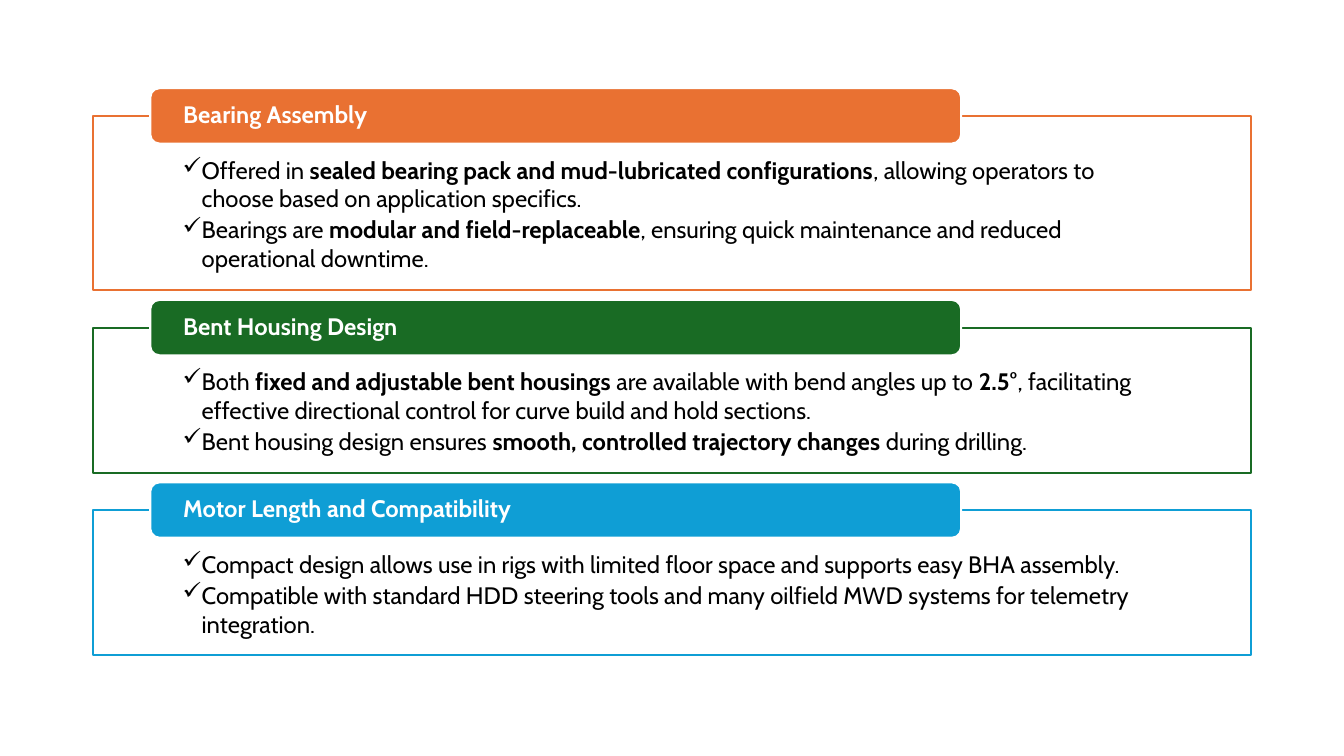
import pptx
import pptx.dml.color
import pptx.enum.shapes
import pptx.enum.text
import pptx.util
from lxml import etree
from pptx.oxml.ns import qn

Inches, Pt = pptx.util.Inches, pptx.util.Pt
SHAPES = pptx.enum.shapes.MSO_SHAPE
ANCHOR = pptx.enum.text.MSO_ANCHOR
ALIGN = pptx.enum.text.PP_ALIGN

SLIDE_WIDTH, SLIDE_HEIGHT = 13.33, 7.5
PANEL_LEFT, PANEL_TOP, PANEL_WIDTH = 0.92, 1.15, 11.49
PANEL_GAP = 0.37
TAB_INDENT, TAB_SHARE, TAB_HEIGHT = 0.57, 0.7, 0.55
BULLET_INDENT = 0.19

# Heading, colour, panel height, bullets; asterisks enclose bold words
SECTIONS = [
    ("Bearing Assembly", "E97132", 1.73, [
        "Offered in *sealed bearing pack and mud-lubricated configurations*, "
        "allowing operators to choose based on application specifics.",
        "Bearings are *modular and field-replaceable*, ensuring quick "
        "maintenance and reduced operational downtime.",
    ]),
    ("Bent Housing Design", "196B24", 1.44, [
        "Both *fixed and adjustable bent housings* are available with bend "
        "angles up to *2.5°*, facilitating effective directional control for "
        "curve build and hold sections.",
        "Bent housing design ensures *smooth, controlled trajectory changes* "
        "during drilling.",
    ]),
    ("Motor Length and Compatibility", "0F9ED5", 1.44, [
        "Compact design allows use in rigs with limited floor space and "
        "supports easy BHA assembly.",
        "Compatible with standard HDD steering tools and many oilfield MWD "
        "systems for telemetry integration.",
    ]),
]


def color(hex_string):
    return pptx.dml.color.RGBColor.from_string(hex_string)


def add_box(slide, preset, box, fill, line, insets, anchor):
    shape = slide.shapes.add_shape(preset, *map(Inches, box))
    shape.shadow.inherit = False
    shape.fill.solid()
    shape.fill.fore_color.rgb = color(fill)
    shape.line.color.rgb = color(line)
    shape.line.width = Pt(1.5)
    frame = shape.text_frame
    frame.word_wrap = True
    frame.vertical_anchor = anchor
    (frame.margin_left, frame.margin_top,
     frame.margin_right, frame.margin_bottom) = map(Inches, insets)
    return shape


def style_paragraph(paragraph, hex_string):
    paragraph.alignment = ALIGN.LEFT
    paragraph.font.name = "Cabin"
    paragraph.font.size = Pt(17)
    paragraph.font.color.rgb = color(hex_string)


def add_bullet(paragraph, text):
    style_paragraph(paragraph, "000000")
    paragraph.space_after = Pt(2)
    # Hanging check mark
    properties = paragraph._p.get_or_add_pPr()
    properties.set("marL", str(Inches(BULLET_INDENT)))
    properties.set("indent", str(-Inches(BULLET_INDENT)))
    bullet = etree.Element(qn("a:buChar"), char="✓")
    properties.find(qn("a:defRPr")).addprevious(bullet)
    for index, part in enumerate(text.split("*")):
        run = paragraph.add_run()
        run.text = part
        run.font.bold = index % 2 == 1


def add_section(slide, box, heading, accent, bullets):
    left, top, width, height = box

    # Outlined panel with bullets
    panel = add_box(slide, SHAPES.RECTANGLE, box, "FFFFFF", accent,
                    (0.89, 0.39, 0.89, 0.13), ANCHOR.TOP)
    fill_color = panel._element.spPr.find(qn("a:solidFill"))[0]
    etree.SubElement(fill_color, qn("a:alpha"), val="90000")
    frame = panel.text_frame
    for index, text in enumerate(bullets):
        paragraph = frame.add_paragraph() if index else frame.paragraphs[0]
        add_bullet(paragraph, text)

    # Heading tab straddling the panel's top edge
    tab_box = (left + TAB_INDENT, top - TAB_HEIGHT / 2,
               width * TAB_SHARE, TAB_HEIGHT)
    tab = add_box(slide, SHAPES.ROUNDED_RECTANGLE, tab_box, accent, "FFFFFF",
                  (0.3, 0, 0.3, 0), ANCHOR.MIDDLE)
    paragraph = tab.text_frame.paragraphs[0]
    paragraph.text = heading
    paragraph.line_spacing = 0.9
    style_paragraph(paragraph, "FFFFFF")
    paragraph.font.bold = True


def main():
    presentation = pptx.Presentation()
    presentation.slide_width = Inches(SLIDE_WIDTH)
    presentation.slide_height = Inches(SLIDE_HEIGHT)
    slide = presentation.slides.add_slide(presentation.slide_layouts[6])

    # Stack of sections with equal gaps
    top = PANEL_TOP
    for heading, accent, height, bullets in SECTIONS:
        box = (PANEL_LEFT, top, PANEL_WIDTH, height)
        add_section(slide, box, heading, accent, bullets)
        top += height + PANEL_GAP

    presentation.save("out.pptx")


if __name__ == "__main__":
    main()
